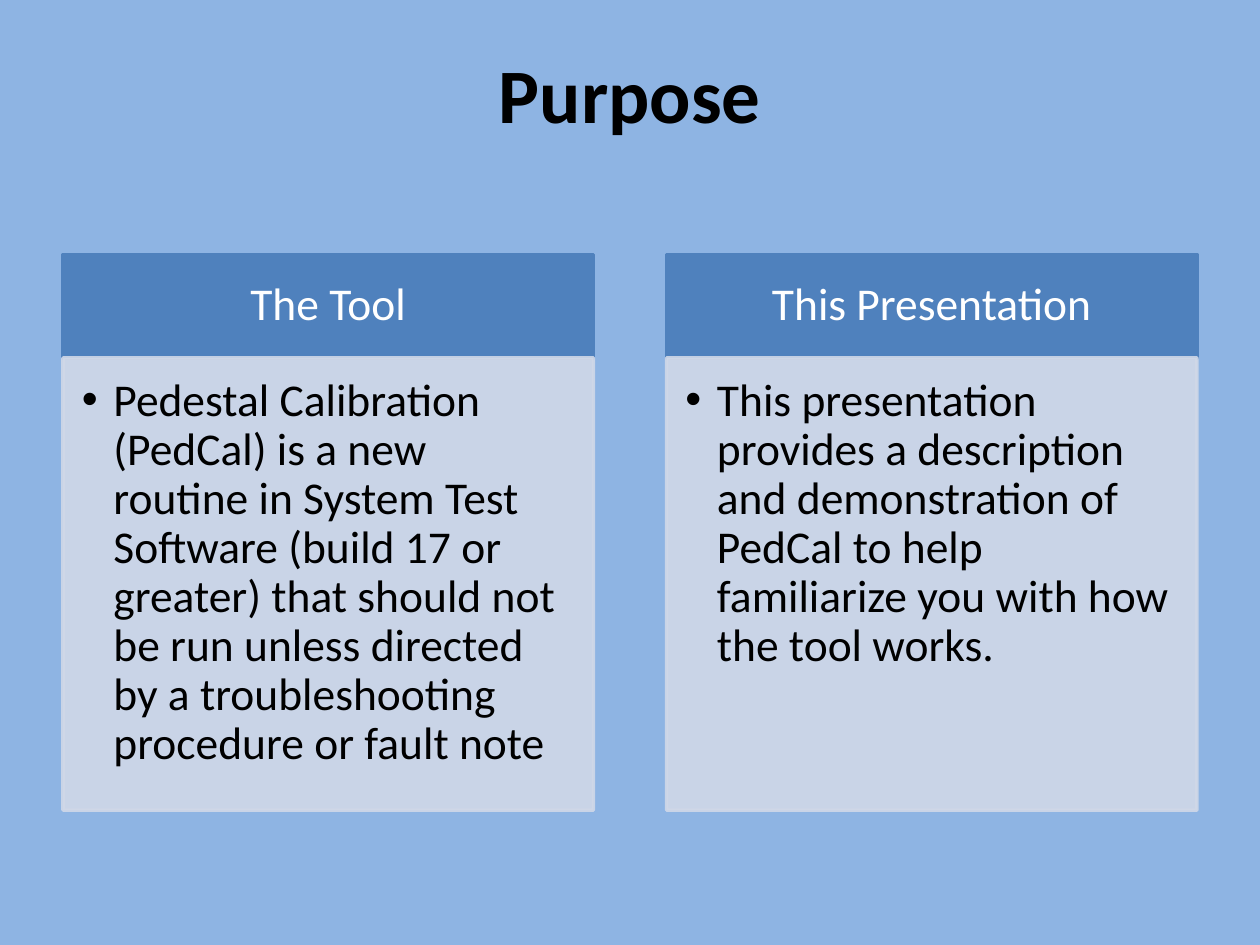
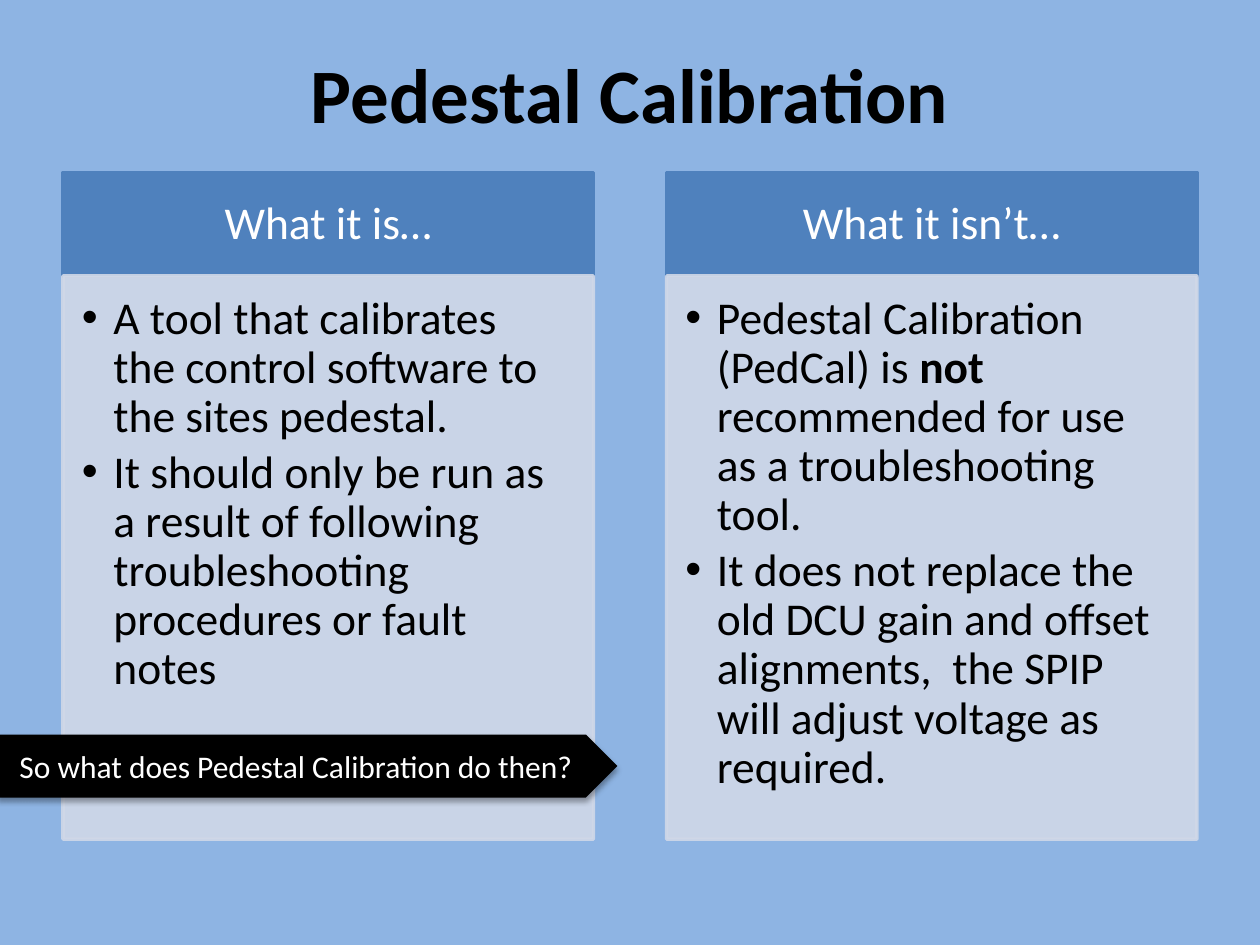
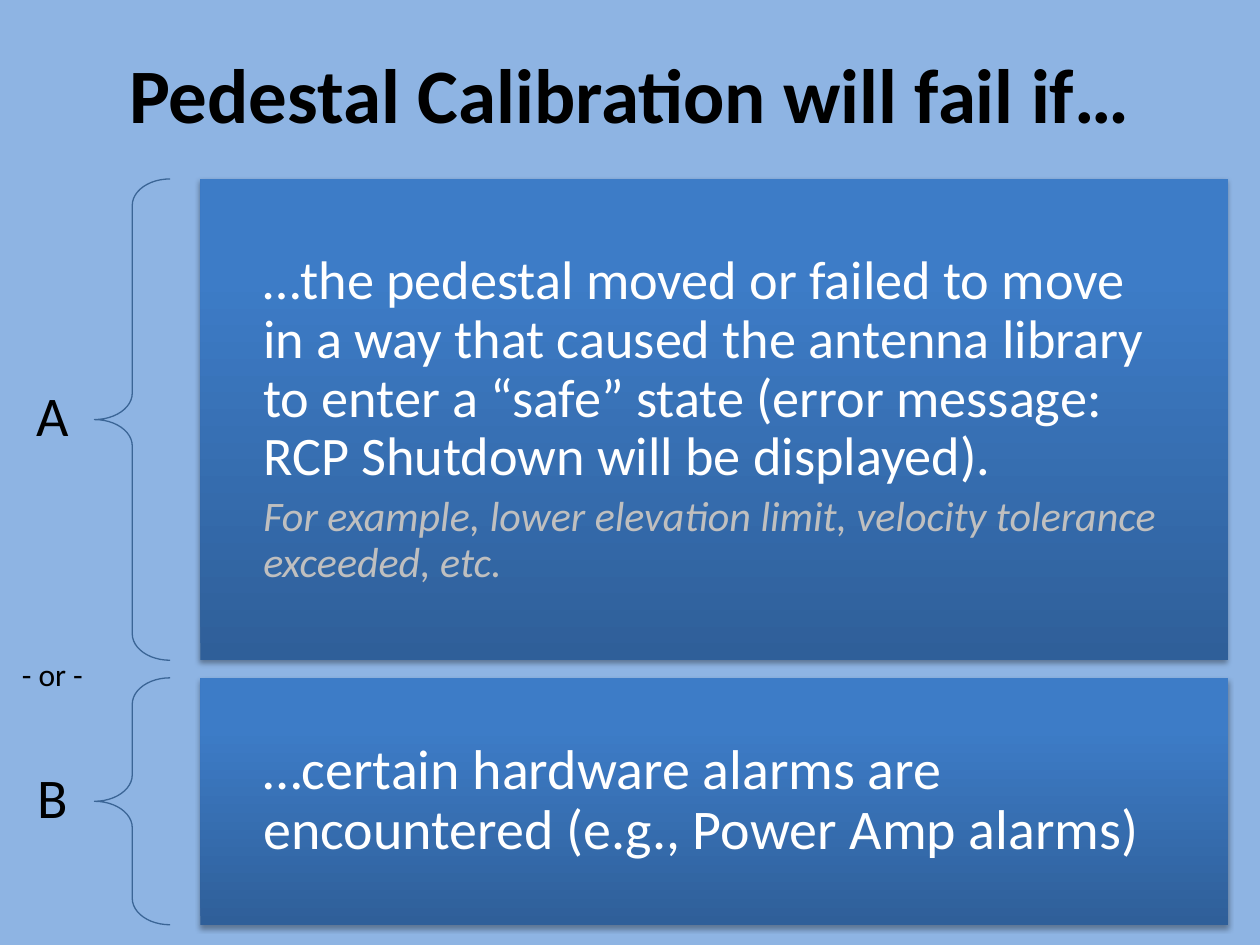
"""Builds three slides about the pedestal calibration tool."""
from lxml.etree import SubElement
from pptx import Presentation
from pptx.dml.color import RGBColor
from pptx.enum.shapes import MSO_SHAPE
from pptx.enum.text import MSO_ANCHOR, MSO_AUTO_SIZE, PP_ALIGN
from pptx.oxml.ns import qn
from pptx.util import Inches, Pt

SKY = RGBColor(0x8E, 0xB4, 0xE3)
BLUE = RGBColor(0x4F, 0x81, 0xBD)
PALE = RGBColor(0xD0, 0xD8, 0xE8)
DEEP = RGBColor(0x2F, 0x5F, 0x99)
BRIGHT = RGBColor(0x3D, 0x7C, 0xC7)
BRACE = RGBColor(0x3B, 0x65, 0x96)
GREY = RGBColor(0xBF, 0xBF, 0xBF)
BLACK = RGBColor(0, 0, 0)
WHITE = RGBColor(255, 255, 255)

COMPARISON, TITLE_ONLY = 3, 5
COMPARISON = 4
COLUMN_LEFTS = (0.5, 5.29)
COLUMN_W, HEADER_H = 4.21, 0.82


def assign(obj, values):
    for name, value in values.items():
        setattr(obj, name, value)


class Deck:
    def __init__(self):
        self.prs = Presentation()
        self.prs.slide_width, self.prs.slide_height = Inches(10), Inches(7.5)
        fill = self.prs.slide_master.background.fill
        fill.solid()
        fill.fore_color.rgb = SKY

    def slide(self, layout, title):
        self.s = self.prs.slides.add_slide(self.prs.slide_layouts[layout])
        sp = self.place(self.s.shapes.title, 0.5, 0.3, 9, 0.87)
        self.set_text(sp, [title], 44, bold=True)

    def place(self, sp, *box):
        assign(sp, dict(zip(("left", "top", "width", "height"), map(Inches, box))))
        return sp

    def set_text(self, sp, paras, size, color=BLACK, bold=False, align=PP_ALIGN.CENTER,
                 anchor=MSO_ANCHOR.MIDDLE, insets=(0.1, 0.05, 0.1, 0.05),
                 spacing=1.0, after=0, bullets=False):
        tf = sp.text_frame
        sides = ("margin_left", "margin_top", "margin_right", "margin_bottom")
        assign(tf, dict(zip(sides, map(Inches, insets))))
        assign(tf, {"word_wrap": True, "auto_size": MSO_AUTO_SIZE.NONE,
                    "vertical_anchor": anchor})
        for i, para in enumerate(paras):
            p = tf.add_paragraph() if i else tf.paragraphs[0]
            assign(p, {"alignment": align, "line_spacing": spacing,
                       "space_before": Pt(0), "space_after": Pt(after)})
            if bullets:
                pPr = p._p.get_or_add_pPr()
                pPr.set("marL", str(Inches(0.25)))
                pPr.set("indent", str(Inches(-0.25)))
            for text, extra in [(para, {})] if isinstance(para, str) else para:
                r = p.add_run()
                r.text = text
                font = {"name": "Calibri", "size": Pt(size), "bold": bold, **extra}
                r.font.color.rgb = font.pop("color", color)
                assign(r.font, font)

    def paint(self, sp, color, alpha=100):
        sp.fill.solid()
        sp.fill.fore_color.rgb = color
        sp.line.color.rgb = color
        sp.line.width = Pt(2)
        if alpha < 100:
            for clr in sp._element.spPr.iter(qn("a:srgbClr")):
                SubElement(clr, qn("a:alpha"), val=str(alpha * 1000))

    def column(self, index, top, body_h, header, items):
        left = COLUMN_LEFTS[index]
        ph = self.s.placeholders
        head = self.place(ph[1 + 2 * index], left, top, COLUMN_W, HEADER_H)
        self.paint(head, BLUE)
        self.set_text(head, [header], 26, WHITE, insets=(0.2, 0.12, 0.2, 0.12), spacing=0.9)
        body = self.place(ph[2 + 2 * index], left, top + HEADER_H, COLUMN_W, body_h)
        self.paint(body, PALE, 90)
        self.set_text(body, items, 26, align=PP_ALIGN.LEFT, anchor=MSO_ANCHOR.TOP,
                      insets=(0.15, 0.15, 0.2, 0.23), spacing=0.9, after=4, bullets=True)

    def shape(self, kind, *box):
        sp = self.s.shapes.add_shape(kind, *map(Inches, box))
        sp.shadow.inherit = False
        return sp

    def shadow(self, sp):
        sp.line.fill.background()
        effects = sp._element.spPr.find(qn("a:effectLst"))
        shadow = SubElement(effects, qn("a:outerShdw"), blurRad=str(Pt(3.1)),
                            dist=str(Pt(1.8)), dir="5400000", rotWithShape="0")
        clr = SubElement(shadow, qn("a:srgbClr"), val=str(BLACK))
        SubElement(clr, qn("a:alpha"), val="35000")

    def arrow(self, text, *box):
        sp = self.shape(MSO_SHAPE.PENTAGON, *box)
        sp.fill.solid()
        sp.fill.fore_color.rgb = BLACK
        self.shadow(sp)
        self.set_text(sp, [text], 18, WHITE)

    def label(self, text, size, *box, **style):
        sp = self.s.shapes.add_textbox(*map(Inches, box))
        self.set_text(sp, [text], size, **style)

    def brace(self, *box):
        sp = self.shape(MSO_SHAPE.LEFT_BRACE, *box)
        sp.adjustments[0] = 0.35
        sp.fill.background()
        sp.line.color.rgb = BRACE
        sp.line.width = Pt(0.75)

    def card(self, paras, size, *box):
        sp = self.shape(MSO_SHAPE.RECTANGLE, *box)
        sp.fill.gradient()
        sp.fill.gradient_angle = 90
        for stop, color, position in zip(sp.fill.gradient_stops, (DEEP, BRIGHT), (0, 0.8)):
            stop.color.rgb = color
            stop.position = position
        self.shadow(sp)
        self.set_text(sp, paras, size, WHITE, align=PP_ALIGN.LEFT, insets=(0.5,) * 4,
                      spacing=0.9, after=4.5)

    def cause(self, letter, top, height, paras, size):
        self.label(letter, 32, 0.04, top + height / 2 - 0.4, 0.75, 0.78,
                   align=PP_ALIGN.RIGHT, insets=(0.25, 0.09, 0.25, 0.09), spacing=0.9)
        self.brace(0.75, top, 0.6, height)
        self.card(paras, size, 1.59, top, 8.16, height)


def main():
    deck = Deck()

    deck.slide(COMPARISON, "Purpose")
    deck.column(0, 2.02, 3.59, "The Tool", [
        "Pedestal Calibration (PedCal) is a new routine in System Test Software "
        "(build 17 or greater) that should not be run unless directed by a "
        "troubleshooting procedure or fault note"])
    deck.column(1, 2.02, 3.59, "This Presentation", [
        "This presentation provides a description and demonstration of  PedCal "
        "to help familiarize you with how the tool works."])

    deck.slide(COMPARISON, "Pedestal Calibration")
    deck.column(0, 1.37, 4.47, "What it is…", [
        "A tool that calibrates the control software to the sites pedestal.",
        "It should only be run as a result of following troubleshooting "
        "procedures or fault notes"])
    deck.column(1, 1.37, 4.47, "What it isn’t…", [
        [("Pedestal Calibration (PedCal) is ", {}), ("not", {"bold": True}),
         (" recommended for use as a troubleshooting tool.", {})],
        "It does not replace the old DCU gain and offset alignments,  the SPIP "
        "will adjust voltage as required."])
    deck.arrow("So what does Pedestal Calibration do then? ", -0.02, 5.83, 4.92, 0.5)

    deck.slide(TITLE_ONLY, "Pedestal Calibration will fail if…")
    deck.cause("A", 1.42, 3.82, [
        "…the pedestal moved or failed to move in a way that caused the antenna "
        "library to enter a “safe” state (error message: RCP Shutdown will be displayed).",
        [("For example, lower elevation limit, velocity tolerance exceeded, etc.",
          {"size": Pt(24), "color": GREY, "italic": True})]], 31)
    deck.cause("B", 5.38, 1.96, [
        "…certain hardware alarms are encountered (e.g., Power Amp alarms)"], 32)
    deck.label("- or -", 18, 0.04, 5.15, 0.75, 0.4)

    deck.prs.save("out.pptx")


if __name__ == "__main__":
    main()
